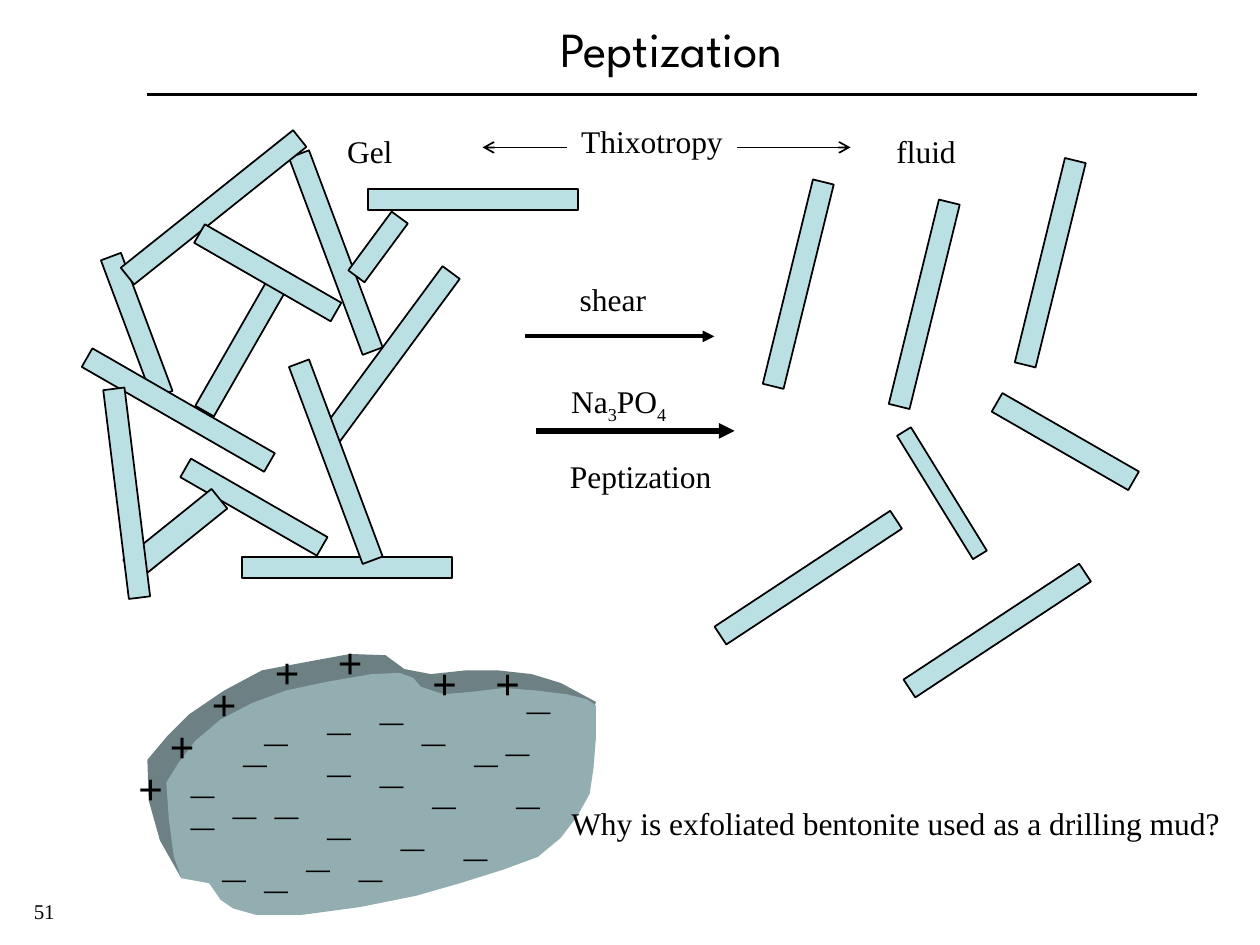
from lxml import etree
from pptx import Presentation
from pptx.dml.color import RGBColor
from pptx.enum.shapes import MSO_CONNECTOR, MSO_SHAPE
from pptx.enum.text import MSO_ANCHOR, MSO_AUTO_SIZE, PP_ALIGN
from pptx.oxml.ns import qn
from pptx.util import Inches, Pt

BLACK = RGBColor(0x00, 0x00, 0x00)
WHITE = RGBColor(0xFF, 0xFF, 0xFF)
PLATE_BLUE = RGBColor(0xBB, 0xE0, 0xE3)
FACE_TEAL = RGBColor(0x93, 0xAE, 0xB1)
EDGE_TEAL = RGBColor(0x6D, 0x80, 0x83)

RECTANGLE = MSO_SHAPE.RECTANGLE
STRAIGHT = MSO_CONNECTOR.STRAIGHT
LEFT, CENTER = PP_ALIGN.LEFT, PP_ALIGN.CENTER
TOP, MIDDLE = MSO_ANCHOR.TOP, MSO_ANCHOR.MIDDLE
FIT, FIXED = MSO_AUTO_SIZE.SHAPE_TO_FIT_TEXT, MSO_AUTO_SIZE.NONE

SERIF, SANS, DISPLAY = "Times New Roman", "Arial", "League Spartan"
GRID = 1 / 12  # inches per grid step
THICK = 0.17   # usual plate thickness

# Clay plates: left, top, length, thickness, rotation; back to front
PLATES = [
    (2.92, 1.5, 1.67, THICK, 0),
    (1.83, 1.92, 1.67, THICK, 69.5),
    (1.39, 3.94, 1.25, THICK, 29.9),
    (1.92, 4.42, 1.67, THICK, 0),
    (2.25, 2.75, 1.67, THICK, 126.4),
    (7.5, 2, 1.67, THICK, 103.8),
    (0.5, 2.5, 1.17, THICK, 69.5),
    (1.83, 3.58, 1.67, THICK, 69.5),
    (6.9, 3.85, 1.15, 0.13, 58.4),
    (5.58, 4.5, 1.67, THICK, 326.6),
    (7.08, 4.92, 1.67, THICK, 326.6),
    (1.33, 2.67, 1.17, THICK, 299.8),
    (6.5, 2.33, 1.67, THICK, 103.8),
    (0.82, 1.56, 1.75, THICK, 141.4),
    (5.5, 2.17, 1.67, THICK, 103.8),
    (0.58, 3.17, 1.67, THICK, 29.9),
    (1.5, 2.08, 1.25, THICK, 29.9),
    (7.83, 3.42, 1.25, THICK, 29.9),
    (2.71, 1.88, 0.58, 0.16, 126.4),
    (0.94, 4.14, 0.9, 0.2, 141.2),
    (0.17, 3.83, 1.67, THICK, 83),
]

# Outlines of the clay particle, in inches
PARTICLE_EDGE = [
    (1.17, 6.03), (1.33, 5.84), (1.5, 5.67), (1.78, 5.48), (2.08, 5.32),
    (2.4, 5.26), (2.78, 5.19), (3.06, 5.2), (3.21, 5.31), (3.42, 5.35),
    (3.7, 5.32), (3.95, 5.32), (4.22, 5.35), (4.45, 5.42), (4.73, 5.57),
    (4.5, 6.3), (2, 6.9), (1.44, 6.97), (1.27, 6.67), (1.18, 6.35),
]
PARTICLE_FACE = [
    (1.32, 6.21), (1.42, 6.05), (1.55, 5.88), (1.75, 5.71), (2, 5.58),
    (2.27, 5.48), (2.6, 5.41), (2.95, 5.35), (3.17, 5.34), (3.28, 5.38),
    (3.34, 5.45), (3.52, 5.51), (3.75, 5.49), (4, 5.46), (4.25, 5.48),
    (4.5, 5.51), (4.66, 5.55), (4.73, 5.6), (4.73, 5.85), (4.71, 6.1),
    (4.68, 6.3), (4.58, 6.48), (4.45, 6.65), (4.27, 6.8), (4, 6.9),
    (3.65, 7.01), (3.3, 7.11), (2.85, 7.2), (2.4, 7.26), (2.03, 7.26),
    (1.85, 7.21), (1.75, 7.14), (1.66, 7.01), (1.44, 6.97), (1.38, 6.8),
    (1.34, 6.5),
]

# Charges on the particle: column, row of the grid
EDGE_CHARGES = [(15, 68), (19, 64), (31, 60), (40, 62), (46, 62), (12, 72),
                (25, 61)]
FACE_CHARGES = [(47, 67), (22, 68), (39, 66), (21, 73), (30, 75), (30, 65),
                (28, 78), (44, 68), (35, 70), (24, 66), (17, 74), (35, 64),
                (37, 76), (30, 69), (20, 79), (40, 72), (49, 63), (48, 72),
                (33, 79), (25, 73), (17, 71), (24, 80), (43, 77)]


def add_plate(slide, left, top, length, thickness, rotation):
    plate = slide.shapes.add_shape(RECTANGLE, Inches(left), Inches(top),
                                   Inches(length), Inches(thickness))
    plate.shadow.inherit = False
    plate.rotation = rotation
    plate.fill.solid()
    plate.fill.fore_color.rgb = PLATE_BLUE
    plate.line.color.rgb = BLACK
    plate.line.width = Pt(1)


def add_outline(slide, points, color):
    corners = [(Inches(x), Inches(y)) for x, y in points]
    builder = slide.shapes.build_freeform(*corners[0])
    builder.add_line_segments(corners[1:], close=True)
    outline = builder.convert_to_shape()
    outline.shadow.inherit = False
    outline.fill.solid()
    outline.fill.fore_color.rgb = color
    outline.line.fill.background()


def add_label(slide, text, left, top, width, height=0.4, size=18, font=SERIF,
              align=CENTER, anchor=MIDDLE, wrap=False, bold=False, fit=FIT):
    label = slide.shapes.add_textbox(Inches(left), Inches(top),
                                     Inches(width), Inches(height))
    frame = label.text_frame
    frame.word_wrap = wrap
    frame.auto_size = fit
    frame.vertical_anchor = anchor
    frame.text = text
    paragraph = frame.paragraphs[0]
    paragraph.alignment = align
    for run in paragraph.runs:
        style_run(run, font, size, bold)
    return label


def style_run(run, font=SERIF, size=18, bold=False):
    run.font.name = font
    run.font.size = Pt(size)
    run.font.bold = bold
    run.font.color.rgb = BLACK


def add_formula(slide, parts, left, top, width):
    """Parts alternate between normal text and subscript."""
    label = add_label(slide, "", left, top, width)
    paragraph = label.text_frame.paragraphs[0]
    for index, part in enumerate(parts):
        run = paragraph.add_run()
        run.text = part
        style_run(run)
        if index % 2:
            run.font._element.set("baseline", "-25000")


def add_line(slide, start, end, y, weight, head=None, tail=None):
    line = slide.shapes.add_connector(STRAIGHT, Inches(start), Inches(y),
                                      Inches(end), Inches(y))
    line.line.color.rgb = BLACK
    line.line.width = Pt(weight)
    for tag, kind in (("a:headEnd", head), ("a:tailEnd", tail)):
        if kind:
            etree.SubElement(line.line._ln, qn(tag), type=kind)
    etree.SubElement(line._element.spPr, qn("a:effectLst"))


def add_charges(slide, sign, places, width, bold):
    for column, row in places:
        add_label(slide, sign, column * GRID, row * GRID, width, 0.5, 24, SANS,
                  LEFT, TOP, wrap=True, bold=bold)


def main():
    deck = Presentation()
    deck.slide_width, deck.slide_height = Inches(10), Inches(7.5)
    slide = deck.slides.add_slide(deck.slide_layouts[6])

    # Rule and slide number
    add_line(slide, 1.17, 9.5, 0.75, 2.25)
    add_label(slide, "51", 0.17, 7.08, 0.4, 0.3, 12, align=LEFT, anchor=TOP)

    # Gel on the left, fluid on the right
    for plate in PLATES:
        add_plate(slide, *plate)

    # Charged clay particle
    add_outline(slide, PARTICLE_EDGE, EDGE_TEAL)
    add_outline(slide, PARTICLE_FACE, FACE_TEAL)
    add_charges(slide, "+", EDGE_CHARGES, 0.43, bold=False)
    add_charges(slide, "_", FACE_CHARGES, 0.5, bold=True)

    # Title and closing question
    add_label(slide, "Peptization", 1.08, 0.17, 8.5, 0.42, 28, DISPLAY,
              wrap=True, fit=FIXED)
    add_label(slide, "Why is exfoliated bentonite used as a drilling mud?",
              4.41, 6.33, 5.4)

    # Ways from gel to fluid
    add_line(slide, 4.25, 5.83, 3.42, 3, tail="triangle")
    add_label(slide, "Peptization", 4.42, 3.58, 1.33)
    add_formula(slide, ("Na", "3", "PO", "4"), 4.42, 3, 0.98)
    add_line(slide, 4.17, 5.67, 2.67, 2.25, tail="triangle")
    add_label(slide, "shear", 4.5, 2.17, 0.73)

    # Thixotropy between the two states
    add_label(slide, "Gel", 2.65, 1, 0.57, anchor=TOP)
    add_label(slide, "fluid", 7.01, 1, 0.68, anchor=TOP)
    add_line(slide, 3.83, 6.75, 1.17, 1, head="arrow", tail="arrow")
    thixotropy = add_label(slide, "Thixotropy", 4.5, 0.92, 1.35, anchor=TOP)
    thixotropy.fill.solid()
    thixotropy.fill.fore_color.rgb = WHITE

    deck.save("out.pptx")


if __name__ == "__main__":
    main()
